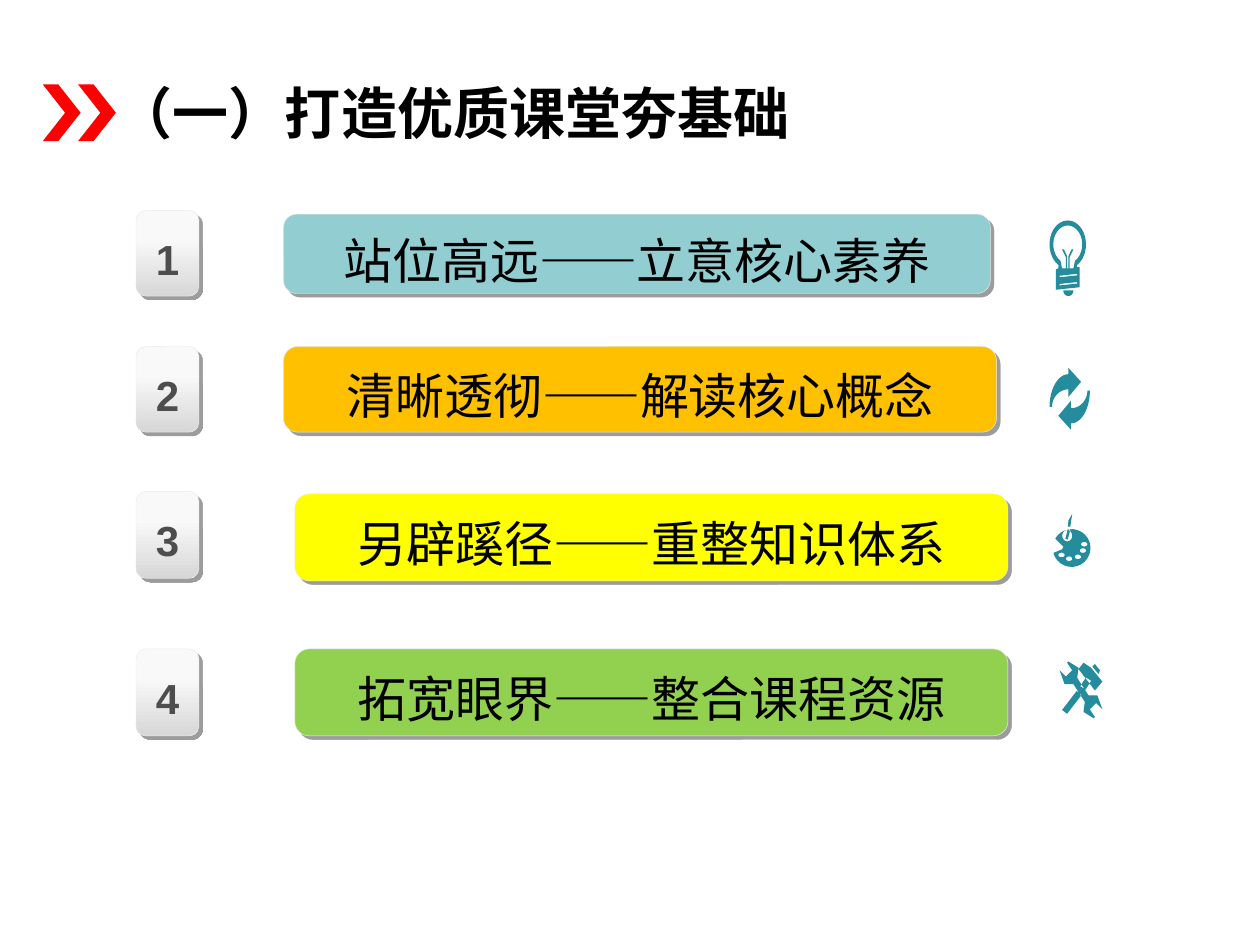
import math

import pptx
import pptx.util
import pptx.dml.color
import pptx.enum.shapes
import pptx.enum.text
import pptx.oxml
import pptx.oxml.ns

Inches, Pt = pptx.util.Inches, pptx.util.Pt
RGB = pptx.dml.color.RGBColor
KIND = pptx.enum.shapes.MSO_SHAPE
ALIGN = pptx.enum.text.PP_ALIGN
ANCHOR = pptx.enum.text.MSO_ANCHOR

BLACK, GREY, EDGE = RGB(0, 0, 0), RGB(0x4D, 0x4D, 0x4D), RGB(0xEA, 0xEA, 0xEA)
PALE, DIM = RGB(0xF9, 0xF9, 0xF9), RGB(0xD7, 0xD7, 0xD7)
RED, TEAL = RGB(0xFF, 0, 0), RGB(0x24, 0x8C, 0x9C)
BLUE, GOLD = RGB(0x92, 0xCD, 0xD2), RGB(0xFF, 0xC0, 0)
YELLOW, GREEN = RGB(0xFF, 0xFF, 0), RGB(0x92, 0xD0, 0x50)

HAN = "Noto Sans CJK SC"
TITLE = "（一）打造优质课堂夯基础"
HEAD = {"name": HAN, "size": Pt(32), "bold": True}
ITEM = {"name": HAN, "size": Pt(28), "bold": False}
DIGIT = {"name": "Arial", "size": Pt(24), "bold": True}

# Columns: left and width of the badges, left edges and width of the bars
BADGE = (1.08, 0.5)
NEAR, FAR, WIDE = 2.25, 2.34, 5.66
# Rows: text, colour, badge top and height, bar box
ROWS = [
    ("站位高远——立意核心素养", BLUE, (1.67, 0.68), (NEAR, 1.7, 5.61, 0.63)),
    ("清晰透彻——解读核心概念", GOLD, (2.75, 0.68), (NEAR, 2.75, WIDE, 0.68)),
    ("另辟蹊径——重整知识体系", YELLOW, (3.9, 0.69), (FAR, 3.92, WIDE, 0.69)),
    ("拓宽眼界——整合课程资源", GREEN, (5.15, 0.69), (FAR, 5.15, WIDE, 0.69)),
]


# Outlines are lists of points in hundredths of an inch from the icon's corner.
def arc(x, y, w, h, start=0, end=360, steps=24):
    """Points on an ellipse, clockwise from the right, angles in degrees."""
    turns = [math.radians(start + (end - start) * i / steps)
             for i in range(steps + 1)]
    return [(x + w * math.cos(t), y + h * math.sin(t)) for t in turns]


def bar(x1, y1, x2, y2, thick):
    """Four corners of a straight strip between two points."""
    size = math.hypot(x2 - x1, y2 - y1)
    dx, dy = (y1 - y2) / size * thick / 2, (x2 - x1) / size * thick / 2
    return [(x1 + dx, y1 + dy), (x2 + dx, y2 + dy),
            (x2 - dx, y2 - dy), (x1 - dx, y1 - dy)]


def flip(points, axis):
    """Mirror left and right."""
    return [(2 * axis - x, y) for x, y in points]


def spin(points, x, y):
    """Half a turn about a centre."""
    return [(2 * x - px, 2 * y - py) for px, py in points]


# Each icon lists its outlines; an outline inside another one cuts a hole.
def bulb():
    mid = 14.5
    base = [(22, 37), (24, 37), (24, 53), (5, 55), (5, 39), (7, 38)]
    glass = arc(mid, 19, 14.5, 19, 120, 420) + base
    inside = arc(mid, 19, 11.5, 15, 120, 420) + [(19, 38), (10, 38)]
    wire = [(10, 23), (13, 29), (13, 38), (14, 38), (14, 28.5), (11.5, 23)]
    grooves = [bar(8, y, 22, y - 1.5, 1.2) for y in (44.5, 51)]
    tip = arc(15, 55.5, 4, 4.5, 0, 180)
    return [glass, inside, wire, flip(wire, mid), *grooves, tip]


def cycle():
    head = [(15, 0), (25, 11), (15, 23)]
    inner = arc(15, 31, 13, 14, 270, 180)
    outer = arc(15, 31, 15, 26, 180, 270)
    arrow = head + inner + outer
    return [arrow, spin(arrow, 16, 24.5)]


def paint():
    notch = [(9, 28), (10, 26), (7, 23)]
    board = arc(16.5, 27, 15, 15, 210, 525) + notch
    well = arc(13, 17.2, 4, 4.5)
    stick = bar(12.5, 20, 14.5, 12, 2)
    hair = [(13.5, 10), (14, 5), (17, 0), (16, 6), (15.5, 10)]
    spots = [(8.5, 32.5), (14.5, 35.5), (21.5, 34), (25.5, 29), (26.5, 24)]
    return [board, well, stick, hair, *(arc(x, y, 2.5, 1.8) for x, y in spots)]


def tools():
    jaw = [(11, 18), (4, 18), (0, 7), (5, 12), (10, 7), (6, 1), (7, 0),
           (15, 5), (14, 13)]
    wrench = jaw + spin(jaw, 17, 22.5)
    grip, neck = bar(4, 40, 15.5, 25, 5), bar(18.5, 21, 23, 14, 5)
    head = [(15, 6), (19, 1), (25, 5), (34, 16), (28, 23)]
    claw = [(26, 4), (28, 2), (32, 7), (31, 10)]
    return [wrench, grip, neck, head, claw]


# Icons: outlines, left, top
ICONS = [(bulb(), 8.33, 1.75), (paint(), 8.34, 4.08),
         (tools(), 8.41, 5.25), (cycle(), 8.33, 2.92)]


def tint(shape, fill, edge=None):
    shape.shadow.inherit = False
    if fill is not None:
        shape.fill.solid()
        shape.fill.fore_color.rgb = fill
    if edge is None:
        shape.line.fill.background()
    else:
        shape.line.color.rgb = edge
        shape.line.width = Pt(0.25)


def write(shape, text, form, color, **look):
    frame = shape.text_frame
    frame.word_wrap = True
    para = frame.paragraphs[0]
    run = para.add_run()
    run.text = text
    for part, vals in ((para, look), (run.font, form)):
        for key, val in vals.items():
            setattr(part, key, val)
    run.font.color.rgb = color
    run.font._element.append(pptx.oxml.parse_xml(
        f'<a:ea {pptx.oxml.ns.nsdecls("a")} typeface="{form["name"]}"/>'))


def cast(shape):
    """Add a hard shadow down to the right."""
    effects = shape._element.spPr.find(pptx.oxml.ns.qn("a:effectLst"))
    effects.append(pptx.oxml.parse_xml(
        f'<a:outerShdw {pptx.oxml.ns.nsdecls("a")} blurRad="0" '
        f'dist="{Pt(3)}" dir="2700000" algn="ctr" rotWithShape="0">'
        '<a:srgbClr val="000000"><a:alpha val="39000"/></a:srgbClr>'
        '</a:outerShdw>'))


def card(shapes, box, text, form, color, fill=None):
    """Rounded box; a pale gradient stands in where no fill is given."""
    shape = shapes.add_shape(KIND.ROUNDED_RECTANGLE, *map(Inches, box))
    tint(shape, fill, EDGE)
    if fill is None:
        shape.fill.gradient()
        shape.fill.gradient_angle = 270
        for stop, (pos, rgb) in zip(shape.fill.gradient_stops,
                                    [(0.33, PALE), (1, DIM)]):
            stop.position, stop.color.rgb = pos, rgb
    cast(shape)
    shape.text_frame.vertical_anchor = ANCHOR.MIDDLE
    write(shape, text, form, color, alignment=ALIGN.CENTER, line_spacing=1.2)


def icon(shapes, loops, left, top):
    fine = 100  # the builder rounds to whole units
    first, *rest = [[(x * fine, y * fine) for x, y in loop] for loop in loops]
    pen = shapes.build_freeform(*first[0], scale=Inches(0.01) / fine)
    pen.add_line_segments(first[1:], close=True)
    for loop in rest:
        pen.move_to(*loop[0])
        pen.add_line_segments(loop[1:], close=True)
    tint(pen.convert_to_shape(Inches(left), Inches(top)), TEAL)


def main():
    deck = pptx.Presentation()
    deck.slide_width, deck.slide_height = Inches(10), Inches(7.5)
    shapes = deck.slides.add_slide(deck.slide_layouts[6]).shapes

    left, width = BADGE
    for num, (text, fill, (top, height), box) in enumerate(ROWS, 1):
        card(shapes, (left, top, width, height), str(num), DIGIT, GREY)
        card(shapes, box, text, ITEM, BLACK, fill)

    for loops, x, y in ICONS:
        icon(shapes, loops, x, y)

    for x in (0.34, 0.62):
        mark = shapes.add_shape(KIND.CHEVRON,
                                *map(Inches, (x, 0.67, 0.3, 0.45)))
        mark.adjustments[0] = 0.59
        tint(mark, RED)

    title = shapes.add_textbox(*map(Inches, (0.83, 0.57, 7.42, 0.85)))
    write(title, TITLE, HEAD, BLACK)
    deck.save("out.pptx")


if __name__ == "__main__":
    main()
